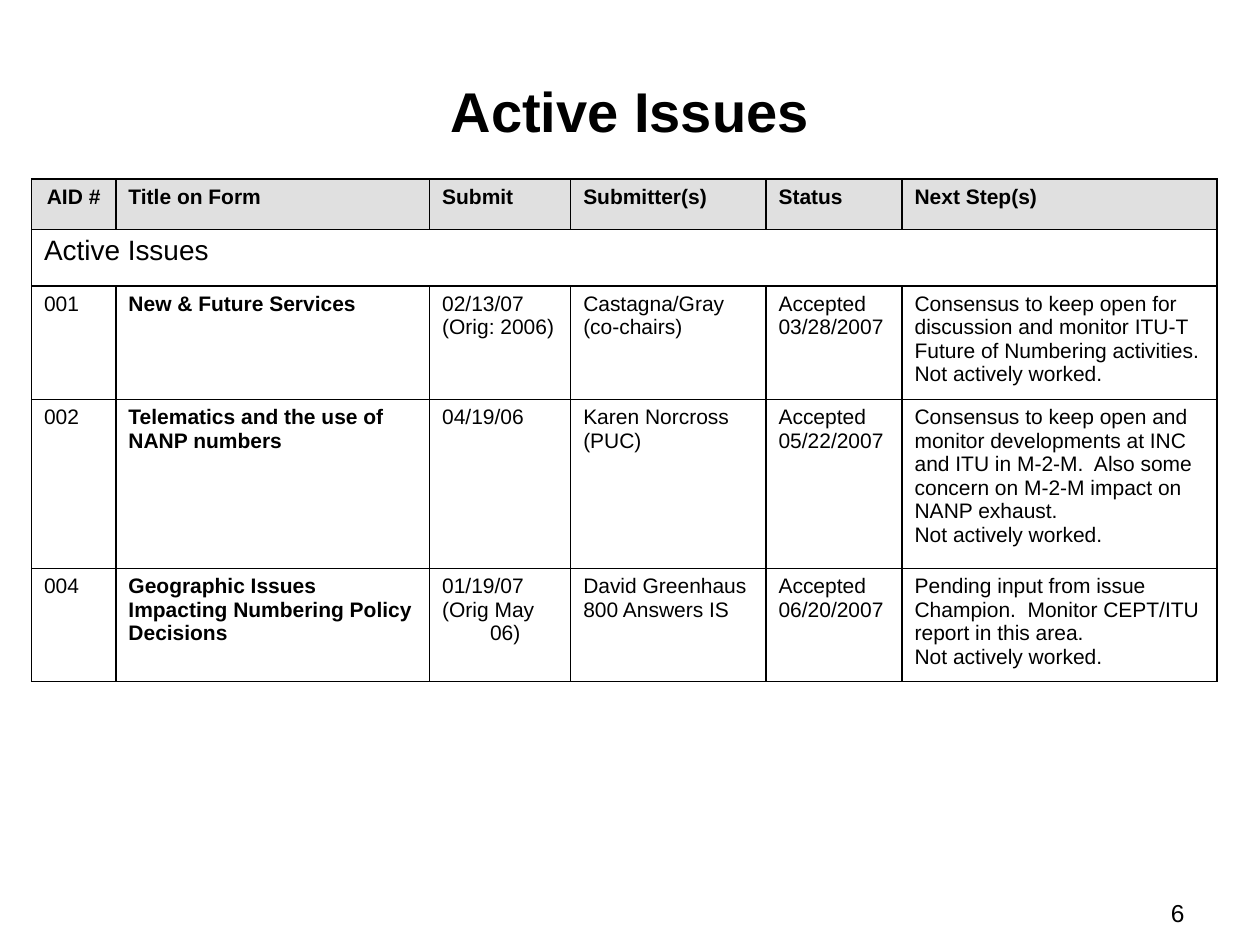
from lxml.etree import SubElement
from pptx import Presentation
from pptx.dml.color import RGBColor
from pptx.enum.text import MSO_ANCHOR, PP_ALIGN as Align
from pptx.oxml.ns import qn
from pptx.util import Inches, Pt

BLACK = RGBColor(0x00, 0x00, 0x00)
HEADER_GREY = RGBColor(0xE0, 0xE0, 0xE0)

COLUMN_WIDTHS = [0.67, 2.49, 1.12, 1.55, 1.08, 2.5]
ROW_HEIGHTS = [0.4, 0.45, 0.85, 1.34, 0.85]
HANGING_COLUMNS = (0, 2, 3)
HANGING_INDENT = 0.38

HEADERS = ["AID #", "Title on Form", "Submit", "Submitter(s)", "Status", "Next Step(s)"]
SECTION = "Active Issues"
ISSUES = [
    ["001", "New & Future Services", "02/13/07\n(Orig: 2006)",
     "Castagna/Gray\n(co-chairs)", "Accepted\n03/28/2007",
     "Consensus to keep open for discussion and monitor ITU-T Future of "
     "Numbering activities. Not actively worked."],
    ["002", "Telematics and the use of NANP numbers", "04/19/06",
     "Karen Norcross\n(PUC)", "Accepted \v05/22/2007",
     "Consensus to keep open and monitor developments at INC and ITU in M-2-M.  "
     "Also some concern on M-2-M impact on NANP exhaust.\nNot actively worked."],
    ["004", "Geographic Issues Impacting Numbering Policy Decisions",
     "01/19/07\n(Orig May 06)", "David Greenhaus\n800 Answers IS",
     "Accepted \v06/20/2007",
     "Pending input from issue Champion.  Monitor CEPT/ITU report in this area.\n"
     "Not actively worked."],
]


class IssueSlide:
    font_name = "Arial"
    border_width = Pt(1)

    def __init__(self, slide):
        self.slide = slide

    def fill_text(self, frame, text, size, bold=False, align=Align.LEFT, hanging=False):
        frame.text = text
        for paragraph in frame.paragraphs:
            paragraph.alignment = align
            paragraph.font.name = self.font_name
            paragraph.font.size = Pt(size)
            paragraph.font.bold = bold
            paragraph.font.color.rgb = BLACK
            if hanging:
                properties = paragraph._p.get_or_add_pPr()
                properties.set("marL", str(Inches(HANGING_INDENT)))
                properties.set("indent", str(-Inches(HANGING_INDENT)))

    def text(self, box, text, size, anchor=MSO_ANCHOR.TOP, **style):
        frame = self.slide.shapes.add_textbox(*map(Inches, box)).text_frame
        frame.word_wrap = True
        frame.vertical_anchor = anchor
        self.fill_text(frame, text, size, **style)

    def border(self, cell):
        properties = cell._tc.get_or_add_tcPr()
        for side in ("lnL", "lnR", "lnT", "lnB"):
            line = SubElement(properties, qn(f"a:{side}"), w=str(self.border_width))
            fill = SubElement(line, qn("a:solidFill"))
            SubElement(fill, qn("a:srgbClr"), val=str(BLACK))

    def table(self, left, top):
        rows = [HEADERS, [SECTION] + [""] * (len(HEADERS) - 1)] + ISSUES
        table = self.slide.shapes.add_table(
            len(rows), len(HEADERS), Inches(left), Inches(top),
            Inches(sum(COLUMN_WIDTHS)), Inches(sum(ROW_HEIGHTS))).table
        table.first_row = table.horz_banding = False
        for column, width in zip(table.columns, COLUMN_WIDTHS):
            column.width = Inches(width)
        for row, height in zip(table.rows, ROW_HEIGHTS):
            row.height = Inches(height)
        for r, texts in enumerate(rows):
            for c, text in enumerate(texts):
                cell = table.cell(r, c)
                self.border(cell)
                if r == 0:
                    cell.fill.solid()
                    cell.fill.fore_color.rgb = HEADER_GREY
                else:
                    cell.fill.background()
                self.fill_text(cell.text_frame, text,
                               size=16 if r == 1 else 12,
                               bold=r == 0 or (r > 1 and c == 1),
                               align=Align.CENTER if r == c == 0 else Align.LEFT,
                               hanging=r < 2 or c in HANGING_COLUMNS)
        table.cell(1, 0).merge(table.cell(1, len(HEADERS) - 1))


def main():
    deck = Presentation()
    deck.slide_width, deck.slide_height = Inches(10), Inches(7.5)
    issues = IssueSlide(deck.slides.add_slide(deck.slide_layouts[6]))
    issues.text((0.5, 0.46, 9, 0.83), "Active Issues", 32,
                anchor=MSO_ANCHOR.MIDDLE, bold=True, align=Align.CENTER)
    issues.table(0.25, 1.42)
    issues.text((7.17, 7.08, 2.33, 0.27), "6", 14, align=Align.RIGHT)
    deck.save("out.pptx")


if __name__ == "__main__":
    main()
